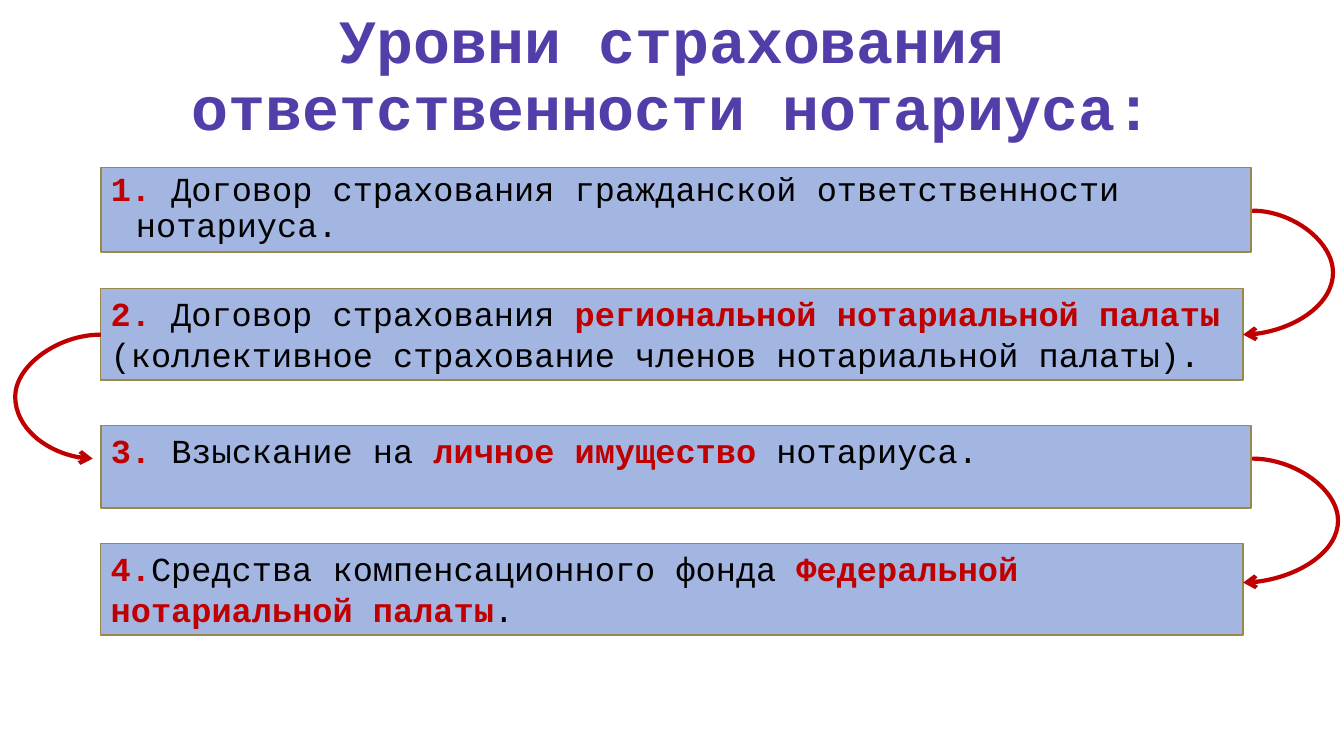
import pptx
import pptx.dml.color
import pptx.enum.shapes
import pptx.enum.text
import pptx.oxml
import pptx.oxml.ns
import pptx.util
from lxml import etree

Inches = pptx.util.Inches
Pt = pptx.util.Pt
RGBColor = pptx.dml.color.RGBColor
qn = pptx.oxml.ns.qn

PURPLE = RGBColor(0x53, 0x3E, 0xA9)
RED = RGBColor(0xC0, 0x00, 0x00)
BLACK = RGBColor(0x00, 0x00, 0x00)
BLUE = RGBColor(0xA3, 0xB6, 0xE2)
OLIVE = RGBColor(0x98, 0x89, 0x4B)

LEFT = 1
# top, width, height, line spacing, hanging indent, runs as (text, emphasised)
LEVELS = [
    (1.66, 11.41, 0.84, 0.9, 0.25, [
        ("1.", True),
        (" Договор страхования гражданской ответственности нотариуса.", False)]),
    (2.86, 11.33, 0.91, 1.0, 0, [
        ("2.", True), (" Договор страхования ", False),
        ("региональной нотариальной палаты ", True),
        ("(коллективное страхование членов нотариальной палаты).", False)]),
    (4.22, 11.41, 0.82, 1.0, 0, [
        ("3.", True), (" Взыскание на ", False),
        ("личное имущество ", True), ("нотариуса.", False)]),
    (5.39, 11.33, 0.91, 1.0, 0, [
        ("4.", True), ("Средства компенсационного фонда ", False),
        ("Федеральной нотариальной палаты", True), (".", False)]),
]
# start x, end x, x of the outermost point
ARROWS = [(12.42, 12.33, 13.22), (1, 0.92, 0.15), (12.42, 12.33, 13.27)]
ARROW_TOP = 2.09
ARROW_STEP = 1.23


def add_run(p, text, *, size, color, bold=False, font="Courier New"):
    r = p.add_run()
    r.text = text
    r.font.name = font
    r.font.size = Pt(size)
    r.font.bold = bold
    r.font.color.rgb = color


class SlideBuilder:
    def __init__(self, prs):
        self.slide = prs.slides.add_slide(prs.slide_layouts[6])
        self.text_size = 24
        self.title_size = 44
        self.arrow_width = 3

    def title(self, text, left, top, width, height):
        sp = self.slide.shapes.add_textbox(
            Inches(left), Inches(top), Inches(width), Inches(height))
        tf = sp.text_frame
        tf.word_wrap = True
        tf.vertical_anchor = pptx.enum.text.MSO_ANCHOR.MIDDLE
        p = tf.paragraphs[0]
        p.alignment = pptx.enum.text.PP_ALIGN.CENTER
        p.line_spacing = 0.9
        add_run(p, text, size=self.title_size, color=PURPLE, bold=True)

    def level(self, top, width, height, spacing, hanging, runs):
        sp = self.slide.shapes.add_shape(
            pptx.enum.shapes.MSO_SHAPE.RECTANGLE,
            Inches(LEFT), Inches(top), Inches(width), Inches(height))
        sp.shadow.inherit = False
        sp.fill.solid()
        sp.fill.fore_color.rgb = BLUE
        sp.line.color.rgb = OLIVE
        sp.line.width = Pt(1)
        tf = sp.text_frame
        tf.word_wrap = True
        tf.vertical_anchor = pptx.enum.text.MSO_ANCHOR.TOP
        p = tf.paragraphs[0]
        p.alignment = pptx.enum.text.PP_ALIGN.LEFT
        p.line_spacing = spacing
        if hanging:
            pPr = p._p.get_or_add_pPr()
            pPr.set("marL", str(Inches(hanging)))
            pPr.set("indent", str(-Inches(hanging)))
        for text, emphasised in runs:
            add_run(p, text, size=self.text_size,
                    color=RED if emphasised else BLACK, bold=emphasised)

    def curved_arrow(self, x1, y1, x2, y2, bulge):
        """Draw a curved arrow whose outermost point lies at x = bulge."""
        cxn = self.slide.shapes.add_connector(
            pptx.enum.shapes.MSO_CONNECTOR.CURVE,
            Inches(x1), Inches(y1), Inches(x2), Inches(y2))
        cxn.line.color.rgb = RED
        cxn.line.width = Pt(self.arrow_width)
        spPr = cxn._element.spPr
        avLst = spPr.find(qn("a:prstGeom")).get_or_add_avLst()
        adj = round((bulge - x1) / (x2 - x1) * 100000)
        etree.SubElement(avLst, qn("a:gd"), name="adj1", fmla=f"val {adj}")
        etree.SubElement(spPr.find(qn("a:ln")), qn("a:tailEnd"), type="arrow")
        etree.SubElement(spPr, qn("a:effectLst"))


def main():
    prs = pptx.Presentation()
    prs.slide_width = Inches(13.33)
    prs.slide_height = Inches(7.5)
    s = SlideBuilder(prs)
    s.title("Уровни страхования ответственности нотариуса:", 0.92, 0, 11.5, 1.53)
    for level in LEVELS:
        s.level(*level)
    for i, (x1, x2, bulge) in enumerate(ARROWS):
        y = ARROW_TOP + i * ARROW_STEP
        s.curved_arrow(x1, y, x2, y + ARROW_STEP, bulge)
    prs.save("out.pptx")


if __name__ == "__main__":
    main()
